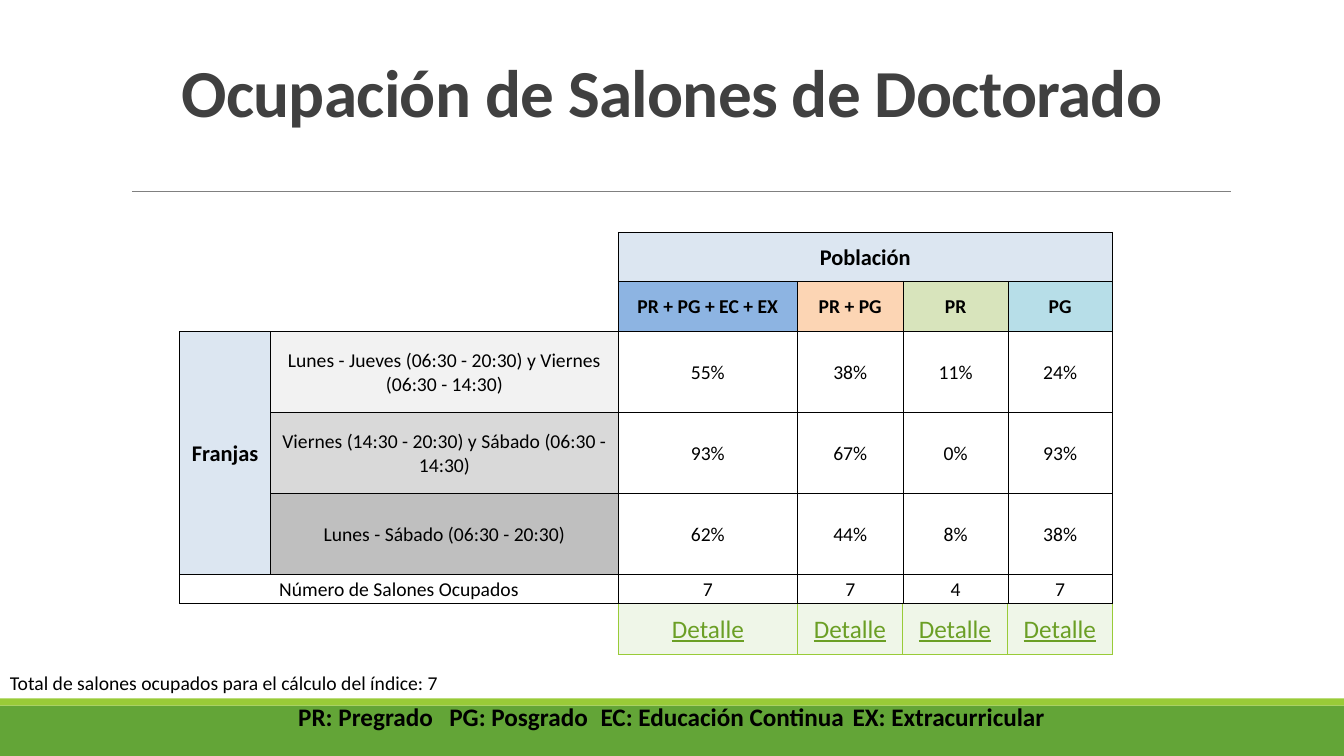
from lxml import etree
from pptx import Presentation
from pptx.dml.color import RGBColor
from pptx.enum.shapes import MSO_CONNECTOR, MSO_SHAPE
from pptx.enum.text import MSO_ANCHOR as ANCHOR, PP_ALIGN as ALIGN
from pptx.oxml.ns import qn
from pptx.util import Pt

COLORS = {
    "green": "63A537", "lime": "99CB38", "rule": "808080", "title": "404040",
    "black": "000000", "white": "FFFFFF", "link": "6B9F25", "mint": "EFF6E8",
    "pale_blue": "DCE6F1", "blue": "8DB4E2", "peach": "FCD5B4", "olive": "D8E4BC",
    "aqua": "B7DEE8", "gray1": "F2F2F2", "gray2": "D9D9D9", "gray3": "BFBFBF",
}
COLORS = {name: RGBColor.from_string(value) for name, value in COLORS.items()}


def write(tf, text, size, color, bold=False, align=ALIGN.CENTER):
    tf.text = text
    p = tf.paragraphs[0]
    p.alignment = align
    for r in p.runs:
        r.font.name = "Calibri"
        r.font.size = Pt(size)
        r.font.bold = bold
        r.font.color.rgb = COLORS[color]
    return p


def style_cell(cell, fill, color, borders):
    cell.margin_left = cell.margin_right = cell.margin_top = Pt(0.75)
    cell.margin_bottom = 0
    cell.vertical_anchor = ANCHOR.MIDDLE
    tcPr = cell._tc.get_or_add_tcPr()
    for side, width in borders.items():
        ln = etree.SubElement(tcPr, qn("a:ln" + side), w=str(Pt(width)))
        solid = etree.SubElement(ln, qn("a:solidFill"))
        etree.SubElement(solid, qn("a:srgbClr"), val=str(COLORS[color]))
    cell.fill.solid()
    cell.fill.fore_color.rgb = COLORS[fill]


prs = Presentation()
prs.slide_width, prs.slide_height = Pt(960), Pt(540)
s = prs.slides.add_slide(prs.slide_layouts[6])

for top, height, color in [(504, 36, "green"), (498.8, 5.2, "lime")]:
    sp = s.shapes.add_shape(MSO_SHAPE.RECTANGLE, 0, Pt(top), Pt(960), Pt(height))
    sp.shadow.inherit = False
    sp.fill.solid()
    sp.fill.fore_color.rgb = COLORS[color]
    sp.line.fill.background()

line = s.shapes.add_connector(MSO_CONNECTOR.STRAIGHT, Pt(94.3), Pt(136.7), Pt(879), Pt(136.7))
line.line.color.rgb = COLORS["rule"]
line.line.width = Pt(0.5)
etree.SubElement(line._element.spPr, qn("a:effectLst"))

sp = s.shapes.add_textbox(Pt(66), Pt(19.5), Pt(828), Pt(78))
tf = sp.text_frame
tf.word_wrap = True
tf.vertical_anchor = ANCHOR.BOTTOM
p = write(tf, "Ocupación de Salones de Doctorado", 48, "title", True)
p.line_spacing = 0.85
p.runs[0].font._element.set("spc", "-50")

frame = s.shapes.add_table(1, 4, Pt(441.8), Pt(431.3), Pt(352.8), Pt(36))
detail = frame.table
detail.first_row = detail.horz_banding = False
for col, width in zip(detail.columns, [127.8, 75, 75, 75]):
    col.width = Pt(width)
for cell in detail.iter_cells():
    style_cell(cell, "mint", "lime", dict.fromkeys("LRTB", 1))
    write(cell.text_frame, "Detalle", 18, "link")
    cell.text_frame.paragraphs[0].runs[0].font.underline = True

for text, left, top, width, height, size, bold, align in [
    ("Total de salones ocupados para el cálculo del índice: 7",
     0, 476, 449, 41, 14, False, ALIGN.LEFT),
    ("PR: Pregrado\tPG: Posgrado\tEC: Educación Continua\tEX: Extracurricular",
     147.3, 497.5, 664.6, 29, 18, True, ALIGN.CENTER),
]:
    sp = s.shapes.add_textbox(Pt(left), Pt(top), Pt(width), Pt(height))
    sp.text_frame.word_wrap = True
    write(sp.text_frame, text, size, "black", bold, align)

rows = [
    ["", "", "Población", "", "", ""],
    ["", "", "PR + PG + EC + EX", "PR + PG", "PR", "PG"],
    ["Franjas", "Lunes - Jueves (06:30 - 20:30) y Viernes (06:30 - 14:30)", "55%", "38%", "11%", "24%"],
    ["", "Viernes (14:30 - 20:30) y Sábado (06:30 - 14:30)", "93%", "67%", "0%", "93%"],
    ["", "Lunes - Sábado (06:30 - 20:30)", "62%", "44%", "8%", "38%"],
    ["Número de Salones Ocupados", "", "7", "7", "4", "7"],
]
fills = {
    (0, 2): "pale_blue", (2, 0): "pale_blue",
    (1, 2): "blue", (1, 3): "peach", (1, 4): "olive", (1, 5): "aqua",
    (2, 1): "gray1", (3, 1): "gray2", (4, 1): "gray3",
}
thick_cols, thick_rows = {0, 2, 6}, {0, 1, 2, 5, 6}

frame = s.shapes.add_table(6, 6, Pt(128.4), Pt(166.1), Pt(666.1), Pt(265.2))
tbl = frame.table
tbl.first_row = tbl.horz_banding = False
for col, width in zip(tbl.columns, [64.8, 248.5, 127.8, 75.7, 75, 74.3]):
    col.width = Pt(width)
for row, height in zip(tbl.rows, [35, 35.8, 57.8, 57.8, 57.8, 21]):
    row.height = Pt(height)
for first, last in [((0, 2), (0, 5)), ((2, 0), (4, 0)), ((5, 0), (5, 1))]:
    tbl.cell(*first).merge(tbl.cell(*last))

for y, texts in enumerate(rows):
    for x, text in enumerate(texts):
        cell = tbl.cell(y, x)
        if cell.is_spanned:
            continue
        right, bottom = x + cell.span_width, y + cell.span_height
        borders = {
            "L": 1 if x in thick_cols else 0.5,
            "R": 1 if right in thick_cols else 0.5,
            "T": 1 if y in thick_rows else 0.5,
            "B": 1 if bottom in thick_rows else 0.5,
        }
        if not text:
            shown = {"R": right == 2, "B": bottom == 2}
            borders = {side: 1 for side in shown if shown[side]}
        style_cell(cell, fills.get((y, x), "white"), "black", borders)
        size = 16 if text in ("Población", "Franjas") else 14
        write(cell.text_frame, text, size, "black", y < 2 or text == "Franjas")

prs.save("out.pptx")
